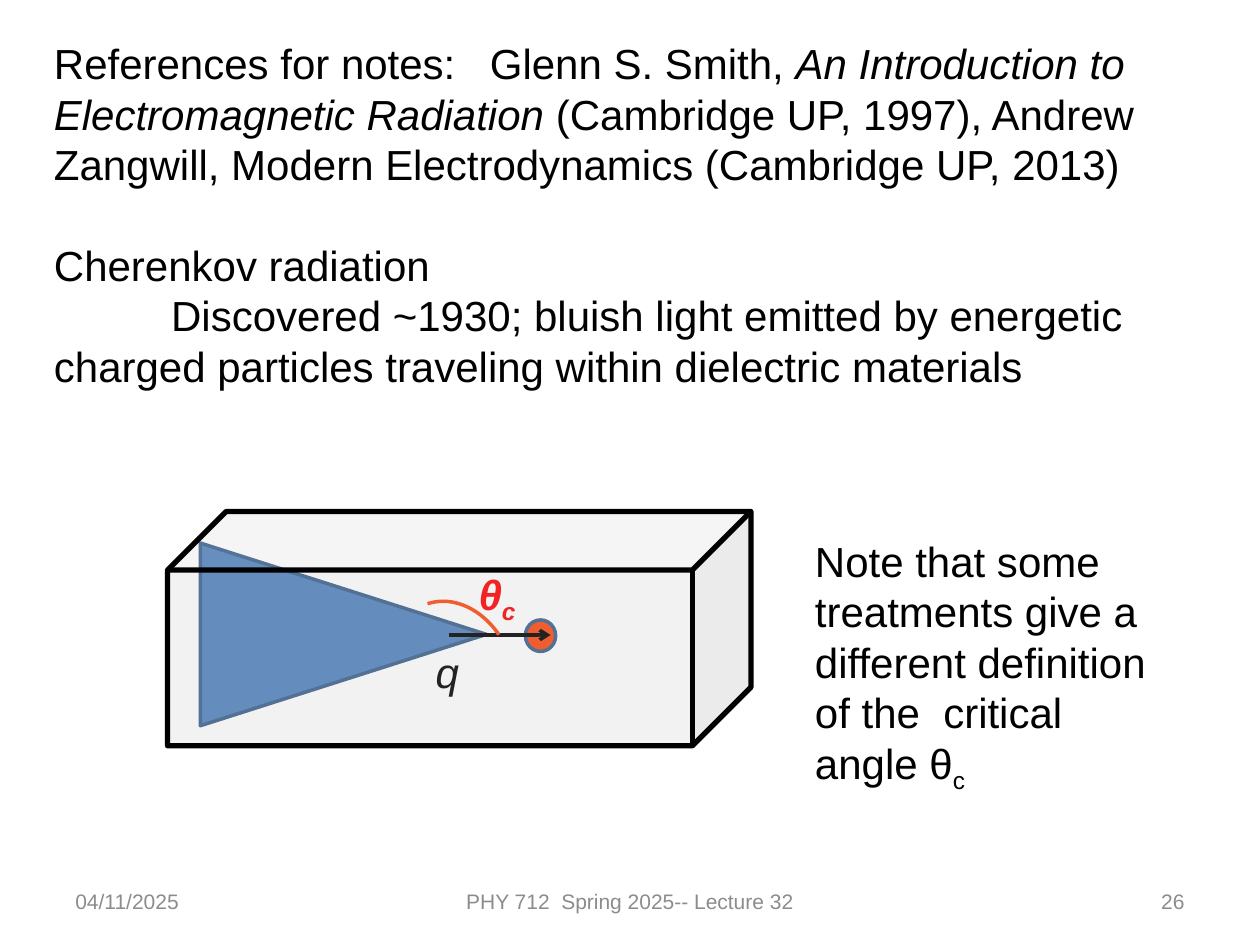
from dataclasses import dataclass

from lxml.etree import SubElement
from pptx import Presentation
from pptx.dml.color import RGBColor
from pptx.enum.shapes import MSO_CONNECTOR as Connector, MSO_SHAPE as Shape
from pptx.enum.text import MSO_ANCHOR as Anchor, PP_ALIGN as Align
from pptx.oxml.ns import qn
from pptx.util import Inches, Pt


@dataclass(frozen=True)
class Theme:
    """Colours, font and type sizes of the slide."""
    font: str = "Arial"
    body: int = 24
    small: int = 12
    ink: str = "000000"
    grey: str = "8C8C8C"
    cone: str = "4F81BD"
    outline: str = "3A5F8C"
    orange: str = "FC4810"
    red: str = "FF0000"
    glass: str = "BFBFBF"


THEME = Theme()


def rgb(color):
    """Return the colour object of a hex string."""
    return RGBColor.from_string(color)


def style(paragraph, size=THEME.body, color=THEME.ink, **flags):
    """Set the font of a whole paragraph."""
    font = paragraph.font
    font.name, font.size, font.color.rgb = THEME.font, Pt(size), rgb(color)
    for flag, value in flags.items():
        setattr(font, flag, value)


def add_text_frame(shapes, left, top, width, height, anchor=Anchor.TOP):
    """Add a wrapping text box and return its frame."""
    frame = shapes.add_textbox(*map(Inches, (left, top, width, height))).text_frame
    frame.word_wrap = True
    frame.vertical_anchor = anchor
    return frame


def add_subscript(paragraph, text):
    """Append a subscript run."""
    run = paragraph.add_run()
    run.text = text
    run.font._element.set("baseline", "-25000")


def add_figure(shapes, kind, left, top, width, height, line, weight=2, fill=None):
    """Add a preset shape with its own line and optional fill."""
    figure = shapes.add_shape(kind, *map(Inches, (left, top, width, height)))
    figure.shadow.inherit = False
    figure.line.color.rgb, figure.line.width = rgb(line), Pt(weight)
    if fill:
        figure.fill.solid()
        figure.fill.fore_color.rgb = rgb(fill)
    else:
        figure.fill.background()
    return figure


def add_references(shapes, left, top, width, height):
    """Place the references and the Cherenkov introduction."""
    frame = add_text_frame(shapes, left, top, width, height)
    references = frame.paragraphs[0]
    tabs = SubElement(references._p.get_or_add_pPr(), qn("a:tabLst"))
    SubElement(tabs, qn("a:tab"), pos=str(Inches(3.46)), algn="l")
    for text, italic in (
        ("References for notes:\tGlenn S. Smith, ", False),
        ("An Introduction to Electromagnetic Radiation", True),
        (" (Cambridge UP, 1997), Andrew Zangwill, Modern Electrodynamics (Cambridge UP, 2013)", False),
    ):
        run = references.add_run()
        run.text, run.font.italic = text, italic
    topic, discovery = frame.add_paragraph(), frame.add_paragraph()
    topic.text = "Cherenkov radiation"
    topic.space_before = Pt(28.8)
    discovery.text = ("Discovered ~1930; bluish light emitted by energetic "
                      "charged particles traveling within dielectric materials")
    discovery._p.get_or_add_pPr().set("indent", str(Inches(0.93)))
    for paragraph in frame.paragraphs:
        style(paragraph)


def add_particle(shapes, left, top):
    """Place the light cone, moving charge and critical angle."""
    cone = add_figure(shapes, Shape.ISOSCELES_TRIANGLE, left + 0.41, top - 0.41, 1.45, 2.27,
                      THEME.outline, fill=THEME.cone)
    cone.rotation = 90
    add_figure(shapes, Shape.OVAL, left + 2.58, top + 0.61, 0.24, 0.25,
               THEME.outline, fill=THEME.orange)
    axis = top + 0.73
    velocity = shapes.add_connector(Connector.STRAIGHT, Inches(left + 1.97), Inches(axis),
                                    Inches(left + 2.78), Inches(axis))
    velocity.line.color.rgb, velocity.line.width = rgb(THEME.ink), Pt(2)
    SubElement(velocity.line._get_or_add_ln(), qn("a:tailEnd"), type="arrow")
    SubElement(velocity._element.spPr, qn("a:effectLst"))
    charge = add_text_frame(shapes, left + 1.77, top + 0.77, 0.73, 0.5).paragraphs[0]
    charge.text = "q"
    style(charge, italic=True)
    arc = add_figure(shapes, Shape.ARC, left + 1.51, top + 0.45, 0.98, 1.25, THEME.orange)
    arc.adjustments[0], arc.adjustments[1] = 162, 201.07
    arc.rotation = 341.7
    angle = add_text_frame(shapes, left + 2.11, top + 0.15, 0.73, 0.5).paragraphs[0]
    angle.text = "θ"
    add_subscript(angle, "c")
    style(angle, color=THEME.red, bold=True, italic=True)


def add_dielectric(shapes, left, top, width, height):
    """Place the particle inside the translucent dielectric block."""
    add_particle(shapes.add_group_shape().shapes, left + 0.26, top + 0.25)
    block = add_figure(shapes, Shape.CUBE, left, top, width, height,
                       THEME.ink, weight=3, fill=THEME.glass)
    glass = block._element.spPr.find(f"{qn('a:solidFill')}/{qn('a:srgbClr')}")
    SubElement(glass, qn("a:alpha"), val="19000")


def add_note(shapes, left, top, width, height):
    """Place the remark on the critical angle."""
    note = add_text_frame(shapes, left, top, width, height).paragraphs[0]
    note.text = "Note that some treatments give a different definition of the  critical angle θ"
    add_subscript(note, "c")
    style(note)


def add_footer(shapes, left, top, width, height):
    """Place the date, lecture and page number along the bottom."""
    side, middle = 2.33, 3.17
    for text, offset, part, align in (
        ("04/11/2025", 0, side, Align.LEFT),
        ("PHY 712  Spring 2025-- Lecture 32", (width - middle) / 2, middle, Align.CENTER),
        ("26", width - side, side, Align.RIGHT),
    ):
        entry = add_text_frame(shapes, left + offset, top, part, height, Anchor.MIDDLE).paragraphs[0]
        entry.text, entry.alignment = text, align
        style(entry, THEME.small, THEME.grey)


def main():
    """Build and save the slide."""
    deck = Presentation()
    deck.slide_width, deck.slide_height = Inches(10), Inches(7.5)
    shapes = deck.slides.add_slide(deck.slide_layouts[6]).shapes
    add_footer(shapes, 0.5, 6.95, 9, 0.4)
    add_references(shapes, 0.33, 0.25, 9, 2.93)
    add_dielectric(shapes, 1.33, 4.06, 4.63, 1.86)
    add_note(shapes, 6.37, 4.2, 2.97, 2.12)
    deck.save("out.pptx")


if __name__ == "__main__":
    main()
